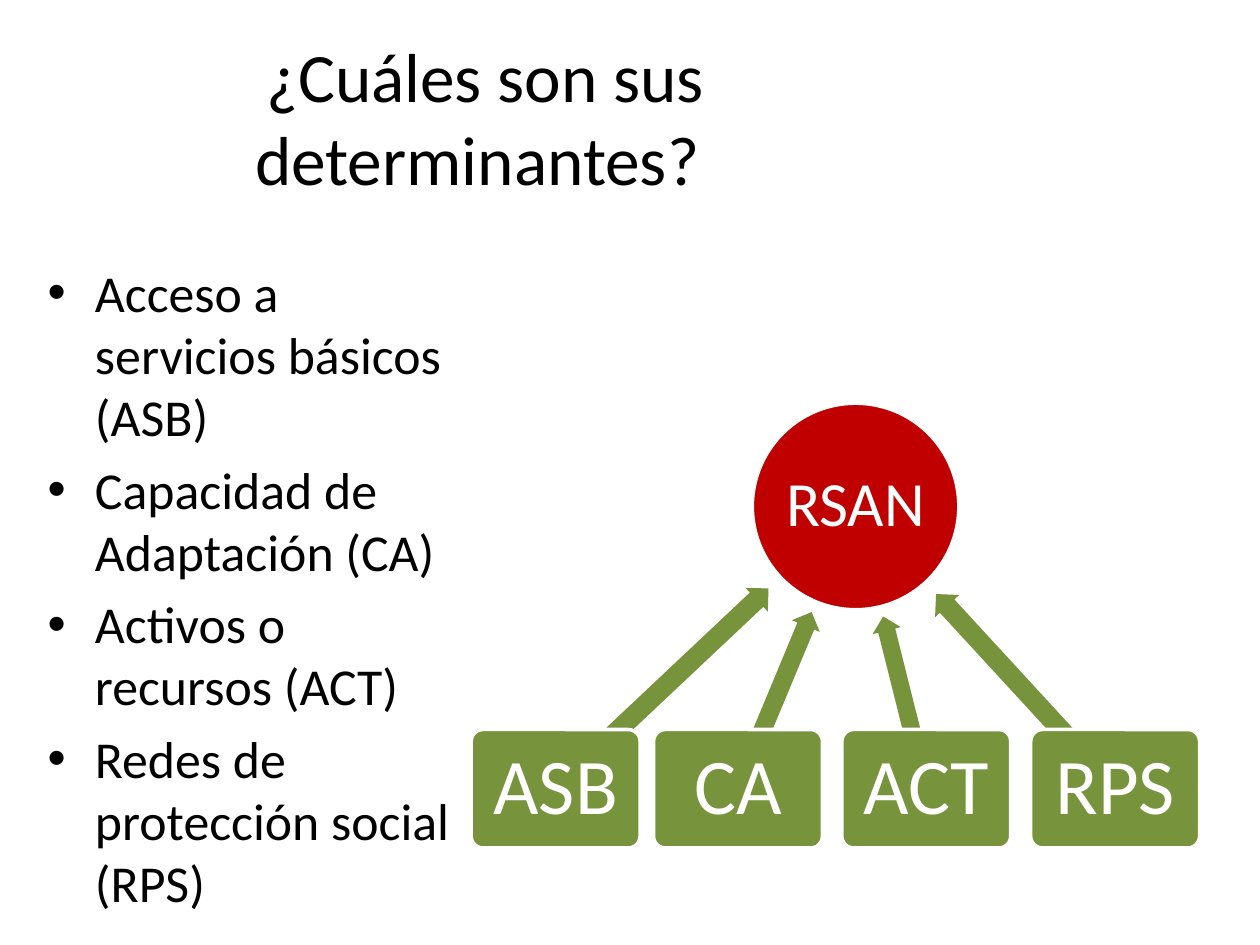
from math import atan2, cos, degrees, radians, sin

from lxml.etree import SubElement
from pptx import Presentation
from pptx.dml.color import RGBColor
from pptx.enum.shapes import MSO_SHAPE
from pptx.enum.text import MSO_ANCHOR, MSO_AUTO_SIZE, PP_ALIGN
from pptx.oxml.ns import qn
from pptx.util import Pt

GREEN = "77933C"
RED = "C00000"
WHITE = "FFFFFF"
BLACK = "000000"

TITLE = "¿Cuáles son sus determinantes? "
DETERMINANTS = [
    "Acceso a servicios básicos (ASB)",
    "Capacidad de Adaptación (CA)",
    "Activos o recursos (ACT)",
    "Redes de protección social (RPS)",
]
CIRCLE_CENTER = (488.9, 289.4)
CIRCLE_SIZE = 118
BOX_TOP = 416.9
BOX_WIDTH = 96.5
BOX_HEIGHT = 67.7
BOXES = [
    ("ASB", 269.3, 167, 18.7),
    ("CA", 373.5, 109.4, 17.3),
    ("ACT", 481.1, 101.5, 16.6),
    ("RPS", 589, 151.2, 18.7),
]


def color(value):
    return RGBColor.from_string(value)


def add_bullet(paragraph, indent):
    properties = paragraph._p.get_or_add_pPr()
    properties.set("marL", str(Pt(indent)))
    properties.set("indent", str(-Pt(indent)))
    SubElement(properties, qn("a:buFont"), typeface="Arial")
    SubElement(properties, qn("a:buChar"), char="•")


def write_text(shape, lines, size, font_color=BLACK, align=PP_ALIGN.CENTER,
               anchor=MSO_ANCHOR.MIDDLE, inset=None, line_spacing=None,
               bullet_indent=None, space_before=0, wrap=True):
    frame = shape.text_frame
    frame.word_wrap = wrap
    frame.auto_size = MSO_AUTO_SIZE.NONE
    frame.vertical_anchor = anchor
    if inset is not None:
        frame.margin_left = frame.margin_right = Pt(inset)
        frame.margin_top = frame.margin_bottom = Pt(inset)
    for index, line in enumerate(lines):
        paragraph = frame.add_paragraph() if index else frame.paragraphs[0]
        paragraph.text = line
        if bullet_indent:
            add_bullet(paragraph, bullet_indent)
        paragraph.alignment = align
        paragraph.space_before = Pt(space_before if index else 0)
        if line_spacing:
            paragraph.line_spacing = line_spacing
        paragraph.font.name = "Calibri"
        paragraph.font.size = Pt(size)
        paragraph.font.color.rgb = color(font_color)


def add_filled_shape(slide, kind, left, top, width, height, fill, outline=None):
    shape = slide.shapes.add_shape(kind, Pt(left), Pt(top), Pt(width), Pt(height))
    shape.shadow.inherit = False
    shape.fill.solid()
    shape.fill.fore_color.rgb = color(fill)
    if outline:
        shape.line.color.rgb = color(outline)
        shape.line.width = Pt(2)
    else:
        shape.line.fill.background()
    return shape


def add_title(slide):
    title = slide.shapes.title
    title.left, title.top, title.width, title.height = Pt(36), Pt(21.6), Pt(482.4), Pt(90)
    write_text(title, [TITLE], 39.6)


def add_determinants(slide):
    box = slide.shapes.add_textbox(Pt(20.2), Pt(145.4), Pt(244), Pt(368.6))
    write_text(box, DETERMINANTS, 29.6, align=PP_ALIGN.LEFT, anchor=MSO_ANCHOR.TOP,
               bullet_indent=27, space_before=5.9)


def add_circle(slide):
    center_x, center_y = CIRCLE_CENTER
    circle = add_filled_shape(slide, MSO_SHAPE.OVAL, center_x - CIRCLE_SIZE / 2,
                              center_y - CIRCLE_SIZE / 2, CIRCLE_SIZE, CIRCLE_SIZE,
                              RED, WHITE)
    write_text(circle, ["RSAN"], 36, font_color=WHITE, inset=0, line_spacing=0.9,
               wrap=False)


def add_arrow_to_circle(slide, start_x, start_y, length, thickness):
    angle = degrees(atan2(start_y - CIRCLE_CENTER[1], start_x - CIRCLE_CENTER[0]))
    middle_x = start_x - length / 2 * cos(radians(angle))
    middle_y = start_y - length / 2 * sin(radians(angle))
    arrow = add_filled_shape(slide, MSO_SHAPE.LEFT_ARROW, middle_x - length / 2,
                             middle_y - thickness / 2, length, thickness, GREEN)
    arrow.adjustments[0] = 0.6
    arrow.adjustments[1] = 0.5
    arrow.rotation = angle


def add_box(slide, label, left):
    box = add_filled_shape(slide, MSO_SHAPE.ROUNDED_RECTANGLE, left, BOX_TOP,
                           BOX_WIDTH, BOX_HEIGHT, GREEN, WHITE)
    box.adjustments[0] = 0.1
    write_text(box, [label], 45, font_color=WHITE, inset=6.5, line_spacing=0.9)


def main():
    presentation = Presentation()
    presentation.slide_width = Pt(720)
    presentation.slide_height = Pt(540)
    slide = presentation.slides.add_slide(presentation.slide_layouts[5])
    add_title(slide)
    add_determinants(slide)
    add_circle(slide)
    for label, left, length, thickness in BOXES:
        add_arrow_to_circle(slide, left + BOX_WIDTH / 2, BOX_TOP + BOX_HEIGHT / 2,
                            length, thickness)
        add_box(slide, label, left)
    presentation.save("out.pptx")


if __name__ == "__main__":
    main()
